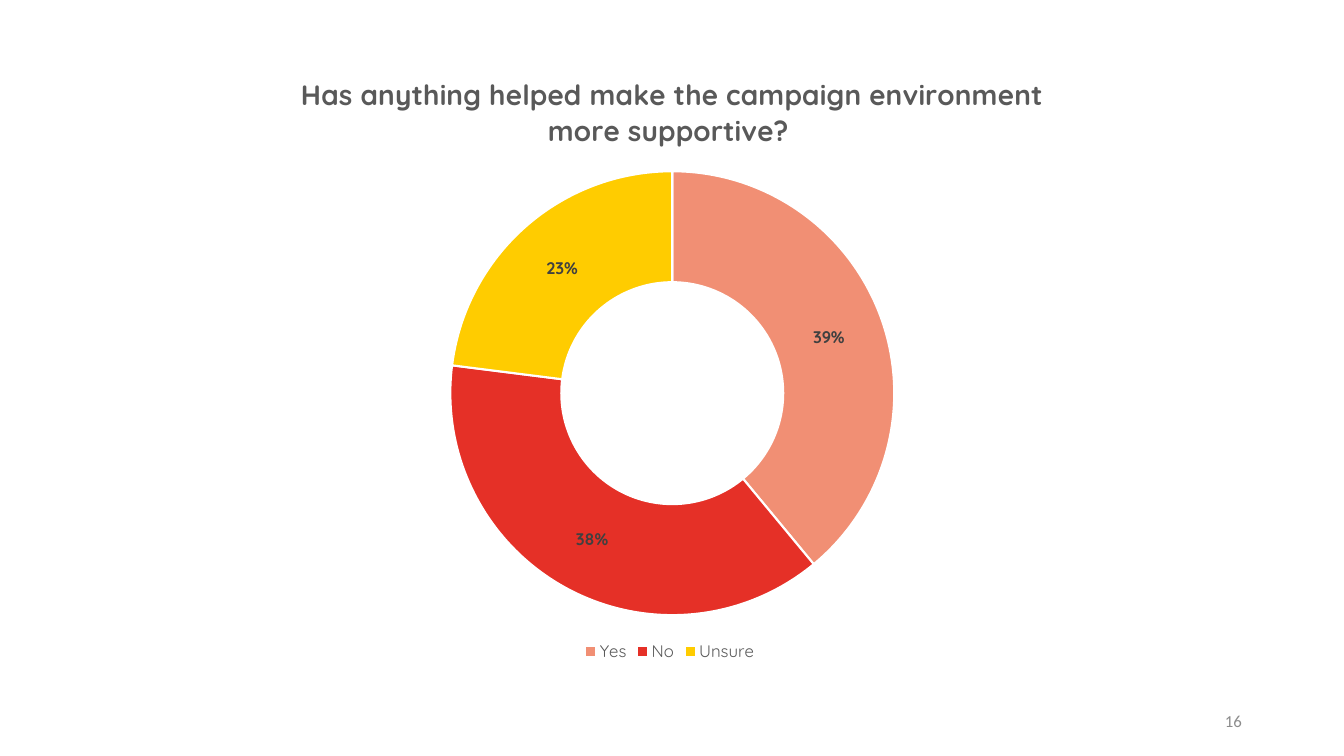
from dataclasses import dataclass

from lxml import etree
from pptx import Presentation
from pptx.chart import data as chart_data
from pptx.dml.color import RGBColor
from pptx.enum import chart as chart_enum, text
from pptx.oxml import ns
from pptx.util import Pt


@dataclass(frozen=True)
class Theme:
    heading_font: str = "Quicksand"
    body_font: str = "Calibri"
    heading: str = "595959"
    label: str = "404040"
    page_number: str = "8C8C8C"
    white: str = "FFFFFF"
    slices: tuple = ("F18F74", "E53027", "FFCC00")
    title_size: int = 20
    small_size: int = 12


theme = Theme()


def style(font, name, size, color, bold=False):
    font.name = name
    font.size = Pt(size)
    font.bold = bold
    font.color.rgb = RGBColor.from_string(color)


deck = Presentation()
deck.slide_width, deck.slide_height = Pt(960), Pt(540)
page = deck.slides.add_slide(deck.slide_layouts[6])

# Doughnut chart
answers = chart_data.CategoryChartData()
answers.categories = ["Yes", "No", "Unsure "]
answers.add_series("Series 1", [39, 38, 23])
chart = page.shapes.add_chart(
    chart_enum.XL_CHART_TYPE.DOUGHNUT,
    Pt(135.36), Pt(36.72), Pt(689.76), Pt(439.2), answers,
).chart
chart.font.name = theme.body_font
chart.font.size = Pt(10)

chart.has_title = True
title = chart.chart_title.text_frame
title.text = "Has anything helped make the campaign environment more supportive?\u00a0"
style(title.paragraphs[0].runs[0].font, theme.heading_font, theme.title_size, theme.heading, True)

chart.has_legend = True
chart.legend.position = chart_enum.XL_LEGEND_POSITION.BOTTOM
chart.legend.include_in_layout = False
style(chart.legend.font, theme.heading_font, theme.small_size, theme.heading)

plot = chart.plots[0]
plot.vary_by_categories = True
series = plot.series[0]
for index, color in enumerate(theme.slices):
    slice_format = series.points[index].format
    slice_format.fill.solid()
    slice_format.fill.fore_color.rgb = RGBColor.from_string(color)
    slice_format.line.color.rgb = RGBColor.from_string(theme.white)
    slice_format.line.width = Pt(1.5)

labels = series.data_labels
labels.show_percentage = True
labels.show_value = False
labels.number_format = "0%"
labels.number_format_is_linked = False
style(labels.font, theme.heading_font, theme.small_size, theme.label, True)

# Ring position, as fractions of the chart area
plot_area = chart.element.find(".//" + ns.qn("c:plotArea"))
for layout in plot_area.findall(ns.qn("c:layout")):
    plot_area.remove(layout)
layout = etree.Element(ns.qn("c:layout"))
plot_area.insert(0, layout)
manual = etree.SubElement(layout, ns.qn("c:manualLayout"))
for tag, value in (
    ("layoutTarget", "inner"), ("xMode", "edge"), ("yMode", "edge"),
    ("x", "0.27"), ("y", "0.195"), ("w", "0.46"), ("h", "0.722"),
):
    etree.SubElement(manual, ns.qn("c:" + tag)).set("val", value)
plot_area.find(".//" + ns.qn("c:holeSize")).set("val", "50")

# Page number
box = page.shapes.add_textbox(Pt(678.24), Pt(500.4), Pt(216), Pt(28.8))
frame = box.text_frame
frame.word_wrap = True
frame.vertical_anchor = text.MSO_ANCHOR.MIDDLE
frame.text = "16"
para = frame.paragraphs[0]
para.alignment = text.PP_ALIGN.RIGHT
style(para.runs[0].font, theme.body_font, theme.small_size, theme.page_number)

deck.save("out.pptx")
